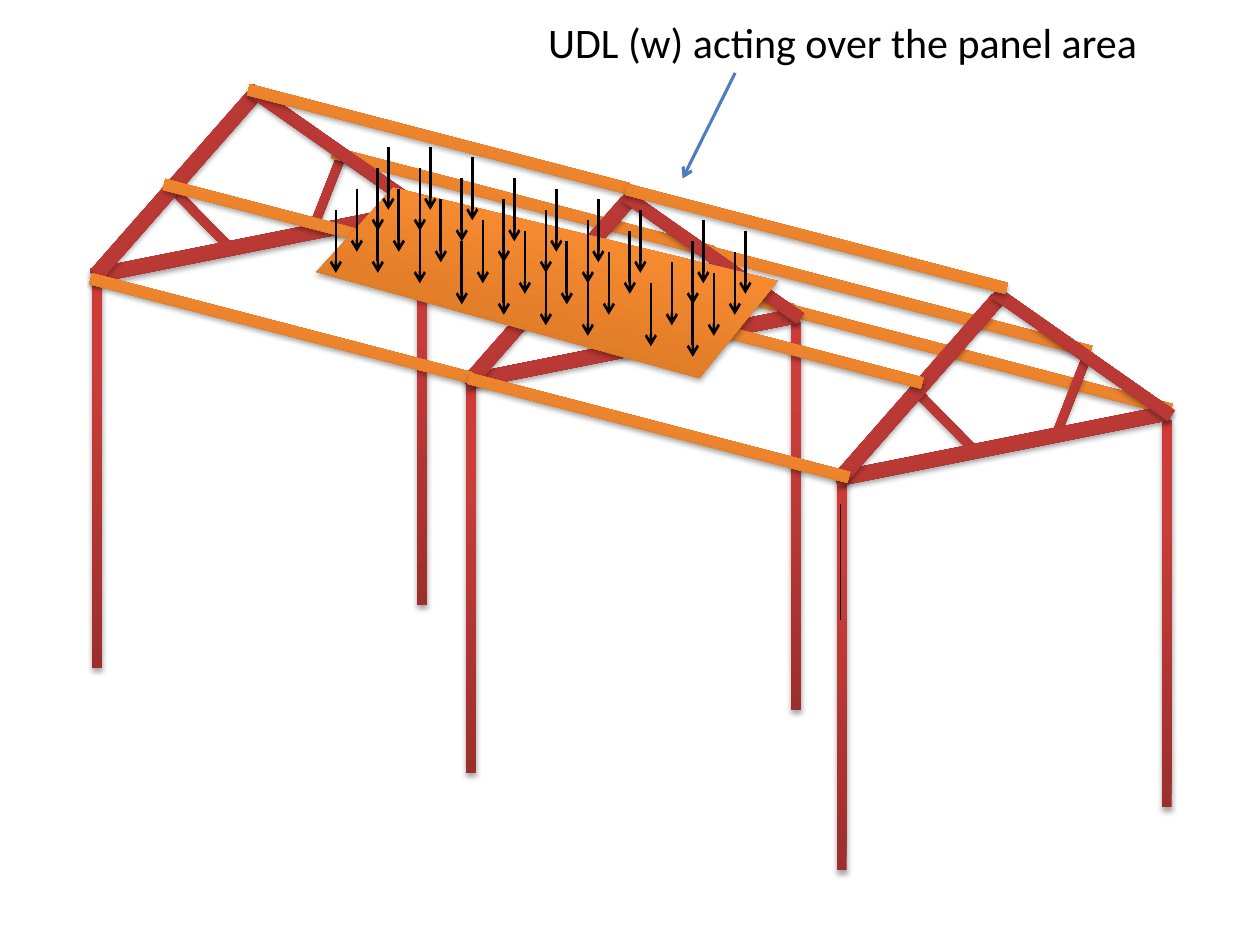
import math

from lxml import etree
from pptx import Presentation
from pptx.dml.color import RGBColor
from pptx.enum.shapes import MSO_CONNECTOR, MSO_SHAPE
from pptx.oxml import parse_xml
from pptx.oxml.ns import nsdecls, qn
from pptx.util import Cm, Pt

STRAIGHT = MSO_CONNECTOR.STRAIGHT
RECT = MSO_SHAPE.RECTANGLE
RED = ("9C2F2D", "CB3E3A", "CE3B37")
ORANGE = ("CC6E20", "FF9034", "FF9136")
BLACK, BLUE = "000000", "4B7EBC"
SLOPE = 14.6
BAY = (7.62, 2.01)
FRAMES = [(16.79, 5.87), (9.32, 3.91), (1.78, 1.78)]
REAR_EAVE, REAR_MID = (8.2, 5.13), (6.58, 3.96)
FRONT_PURLINS = [(1.7, 6.5), (4.88, 2.69), (3.18, 4.6)]


def rgb(value):
    """Return the colour for a hex string."""
    return RGBColor.from_string(value)


def finish(sp, colors):
    """Give a shape a vertical gradient, a soft shadow and no outline."""
    sp.line.fill.background()
    stops = "".join(
        f'<a:gs pos="{pos}"><a:srgbClr val="{color}"/></a:gs>'
        for pos, color in zip((0, 80000, 100000), colors))
    spPr = sp._element.spPr
    spPr.find(qn("a:ln")).addprevious(parse_xml(
        f'<a:gradFill {nsdecls("a")} rotWithShape="1"><a:gsLst>{stops}</a:gsLst>'
        '<a:lin ang="16200000" scaled="0"/></a:gradFill>'))
    spPr.append(parse_xml(
        f'<a:effectLst {nsdecls("a")}><a:outerShdw blurRad="40000" dist="23000" '
        'dir="5400000" rotWithShape="0"><a:srgbClr val="000000">'
        '<a:alpha val="35000"/></a:srgbClr></a:outerShdw></a:effectLst>'))


def add_bar(s, x, y, w, h, rotation, colors, flip=False):
    """Add one structural member."""
    sp = s.shapes.add_shape(RECT, Cm(x), Cm(y), Cm(w), Cm(h))
    sp.rotation = rotation
    if flip:
        sp._element.spPr.xfrm.set("flipV", "1")
    finish(sp, colors)


def add_line(s, x1, y1, x2, y2, color, width, arrow=True):
    """Add a straight line, with an open arrowhead at its end if wanted."""
    line = s.shapes.add_connector(STRAIGHT, Cm(x1), Cm(y1), Cm(x2), Cm(y2))
    line.line.color.rgb = rgb(color)
    line.line.width = Pt(width)
    spPr = line._element.spPr
    if arrow:
        etree.SubElement(spPr.find(qn("a:ln")), qn("a:tailEnd"), type="arrow")
    etree.SubElement(spPr, qn("a:effectLst"))


def add_braces(s, x, y):
    """Add the two inner braces of a truss."""
    for dx, dy, rotation in ((4.01, 1.98, 111.4), (1.42, 2.49, 45.6)):
        add_bar(s, x + dx, y + dy, 1.63, 0.18, rotation, RED, flip=True)


def add_frame(s, x, y):
    """Add the columns, chord and rafters of one portal frame."""
    members = [
        (0.08, 3.86, 0.2, 7.82, 0),
        (6.63, 2.59, 0.2, 7.82, 0),
        (0, 2.97, 6.83, 0.3, -11.3),
        (-0.64, 1.8, 4.78, 0.3, -48.7),
        (2.87, 1.14, 4.34, 0.25, 35),
    ]
    for dx, dy, w, h, rotation in members:
        add_bar(s, x + dx, y + dy, w, h, rotation, RED)


def add_purlin(s, x, y):
    """Add a purlin that runs over both bays."""
    for i in range(2):
        add_bar(s, x + i * BAY[0], y + i * BAY[1], 7.92, 0.23, SLOPE, ORANGE)


def add_panel(s, x, y):
    """Add the loaded roof panel, drawn level and then turned to the slope."""
    corners = [(1.55, 0), (9.3, 1.88), (7.72, 3.84), (0, 1.7)]
    cx, cy = 4.64, 1.86
    cos, sin = math.cos(math.radians(SLOPE)), math.sin(math.radians(SLOPE))
    points = [
        (Cm(x + cx + (px - cx) * cos + (py - cy) * sin),
         Cm(y + cy - (px - cx) * sin + (py - cy) * cos))
        for px, py in corners]
    builder = s.shapes.build_freeform(*points[0])
    builder.add_line_segments(points[1:], close=True)
    sp = builder.convert_to_shape()
    sp.rotation = SLOPE
    finish(sp, ORANGE)


def add_load(s, x, y):
    """Add the rows of load arrows on a grid of twelfths of an inch."""
    unit = 2.54 / 12
    rows = [(39, 8), (35, 7), (29, 6), (25, 5), (21, 4), (17, 3), (13, 1), (9, 0), (5, 0)]
    steps = [(0, 0), (-1, 2), (-3, 4), (-5, 6)]
    for col, row in rows:
        for dx, dy in steps:
            ax, ay = x + (col + dx) * unit, y + (row + dy) * unit
            add_line(s, ax, ay, ax, ay + 6 * unit, BLACK, 1.5)


def add_label(s, x, y):
    """Add the load label and its pointer."""
    tf = s.shapes.add_textbox(Cm(x), Cm(y), Cm(12.5), Cm(1.27)).text_frame
    tf.word_wrap = False
    tf.text = "UDL (w) acting over the panel area"
    font = tf.paragraphs[0].runs[0].font
    font.name, font.size, font.color.rgb = "Calibri", Pt(24), rgb(BLACK)
    add_line(s, x + 4.02, y + 1.27, x + 2.96, y + 3.4, BLUE, 1.75)


def main():
    """Build the slide and save it."""
    prs = Presentation()
    prs.slide_width, prs.slide_height = Cm(25.4), Cm(19.05)
    s = prs.slides.add_slide(prs.slide_layouts[6])
    add_purlin(s, *REAR_EAVE)
    for frame in FRAMES:
        add_braces(s, *frame)
    add_purlin(s, *REAR_MID)
    for frame in FRAMES:
        add_frame(s, *frame)
    for purlin in FRONT_PURLINS:
        add_purlin(s, *purlin)
    add_line(s, 16.94, 10.16, 16.94, 12.5, BLACK, 0.75, arrow=False)
    add_panel(s, 6.38, 3.78)
    add_load(s, 6.77, 2.96)
    add_label(s, 10.8, 0.2)
    prs.save("out.pptx")


if __name__ == "__main__":
    main()
